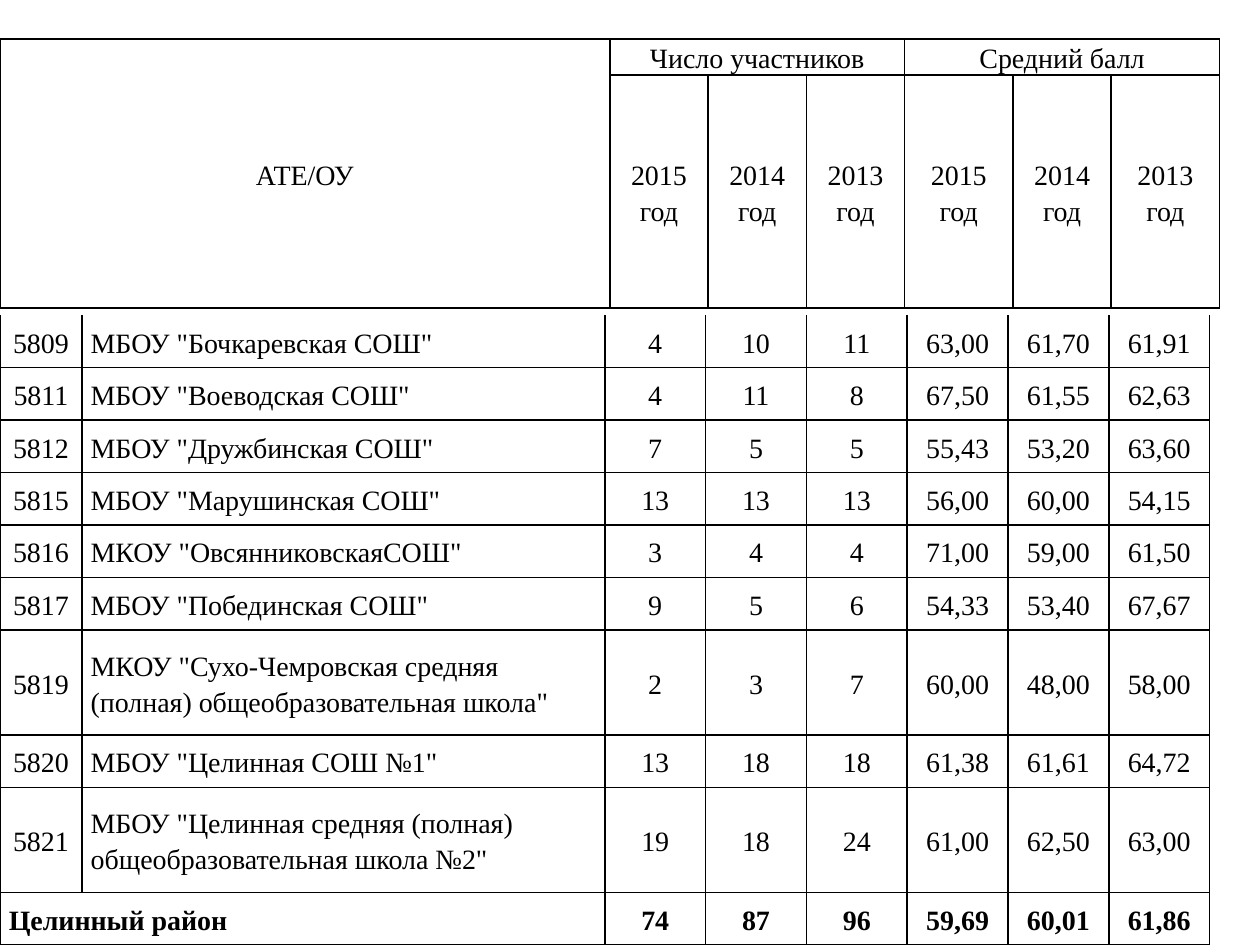
from dataclasses import dataclass

from lxml.etree import SubElement
from pptx import Presentation
from pptx.dml.color import RGBColor
from pptx.enum.text import MSO_ANCHOR, PP_ALIGN
from pptx.oxml.ns import qn
from pptx.util import Inches, Pt


@dataclass(frozen=True)
class Theme:
    ink: str = "000000"
    paper: str = "FFFFFF"
    font: str = "Times New Roman"
    text_size: float = 16
    line_spacing: float = 1.15
    border_width: float = 1
    side_margin: float = 0.07


class ReportPage:
    def __init__(self, deck, theme):
        self.theme = theme
        self.page = deck.slides.add_slide(deck.slide_layouts[6])

    def border(self, cell, side, visible=True):
        properties = cell._tc.get_or_add_tcPr()
        line = SubElement(properties, qn(f"a:ln{side}"), w=str(Pt(self.theme.border_width)))
        if visible:
            fill = SubElement(line, qn("a:solidFill"))
            SubElement(fill, qn("a:srgbClr"), val=self.theme.ink)
        else:
            SubElement(line, qn("a:noFill"))

    def cell(self, cell, text, align, bold, top_border):
        theme = self.theme
        for side in "LRTB":
            self.border(cell, side, side != "T" or top_border)
        cell.fill.solid()
        cell.fill.fore_color.rgb = RGBColor.from_string(theme.paper)
        cell_format = {
            "vertical_anchor": MSO_ANCHOR.MIDDLE,
            "margin_left": Inches(theme.side_margin),
            "margin_right": Inches(theme.side_margin),
            "margin_top": 0,
            "margin_bottom": 0,
        }
        for name, value in cell_format.items():
            setattr(cell, name, value)
        if not text:
            return
        para = cell.text_frame.paragraphs[0]
        para.alignment = align
        para.line_spacing = theme.line_spacing
        span = para.add_run()
        span.text = text
        font_format = {"name": theme.font, "size": Pt(theme.text_size), "bold": bold}
        for name, value in font_format.items():
            setattr(span.font, name, value)
        span.font.color.rgb = RGBColor.from_string(theme.ink)

    def table(self, top, widths, heights, rows, merges, left_columns=(), bold_rows=(), open_top=False):
        box = self.page.shapes.add_table(
            len(heights), len(widths), 0, Inches(top), Inches(sum(widths)), Inches(sum(heights))
        )
        table = box.table
        table.first_row = False
        table.horz_banding = False
        for column, width in zip(table.columns, widths):
            column.width = Inches(width)
        for row, height in zip(table.rows, heights):
            row.height = Inches(height)
        for first, last in merges:
            table.cell(*first).merge(table.cell(*last))
        for r, row in enumerate(rows):
            for c, text in enumerate(row):
                cell = table.cell(r, c)
                to_left = c in left_columns or (cell.is_merge_origin and r in bold_rows)
                align = PP_ALIGN.LEFT if to_left else PP_ALIGN.CENTER
                self.cell(cell, text, align, r in bold_rows, r > 0 or not open_top)


YEARS = ["2015 год", "2014 год", "2013 год"]
HEADER = [
    ["АТЕ/ОУ", "Число участников", "", "", "Средний балл", "", ""],
    ["", *YEARS, *YEARS],
]
SCHOOLS = [
    ["5809", 'МБОУ "Бочкаревская СОШ"', "4", "10", "11", "63,00", "61,70", "61,91"],
    ["5811", 'МБОУ "Воеводская СОШ"', "4", "11", "8", "67,50", "61,55", "62,63"],
    ["5812", 'МБОУ "Дружбинская СОШ"', "7", "5", "5", "55,43", "53,20", "63,60"],
    ["5815", 'МБОУ "Марушинская СОШ"', "13", "13", "13", "56,00", "60,00", "54,15"],
    ["5816", 'МКОУ "ОвсянниковскаяСОШ"', "3", "4", "4", "71,00", "59,00", "61,50"],
    ["5817", 'МБОУ "Побединская СОШ"', "9", "5", "6", "54,33", "53,40", "67,67"],
    ["5819", 'МКОУ "Сухо-Чемровская средняя (полная) общеобразовательная школа"',
     "2", "3", "7", "60,00", "48,00", "58,00"],
    ["5820", 'МБОУ "Целинная СОШ №1"', "13", "18", "18", "61,38", "61,61", "64,72"],
    ["5821", 'МБОУ "Целинная средняя (полная) общеобразовательная школа №2"',
     "19", "18", "24", "61,00", "62,50", "63,00"],
    ["Целинный район", "", "74", "87", "96", "59,69", "60,01", "61,86"],
]
LINES_PER_ROW = [1, 1, 1, 1, 1, 1, 2, 1, 2, 1]
SCHOOLS_HEIGHT = 5


def main():
    deck = Presentation()
    deck.slide_width = Inches(10)
    deck.slide_height = Inches(7.5)
    report = ReportPage(deck, Theme())
    report.table(
        top=0.31,
        widths=[4.84, 0.78, 0.78, 0.78, 0.86, 0.78, 0.86],
        heights=[0.28, 1.85],
        rows=HEADER,
        merges=[((0, 0), (1, 0)), ((0, 1), (0, 3)), ((0, 4), (0, 6))],
    )
    line_height = SCHOOLS_HEIGHT / sum(LINES_PER_ROW)
    total_row = len(SCHOOLS) - 1
    report.table(
        top=2.5,
        widths=[0.65, 4.15] + [0.8] * 6,
        heights=[lines * line_height for lines in LINES_PER_ROW],
        rows=SCHOOLS,
        merges=[((total_row, 0), (total_row, 1))],
        left_columns=(1,),
        bold_rows=(total_row,),
        open_top=True,
    )
    deck.save("out.pptx")


if __name__ == "__main__":
    main()
